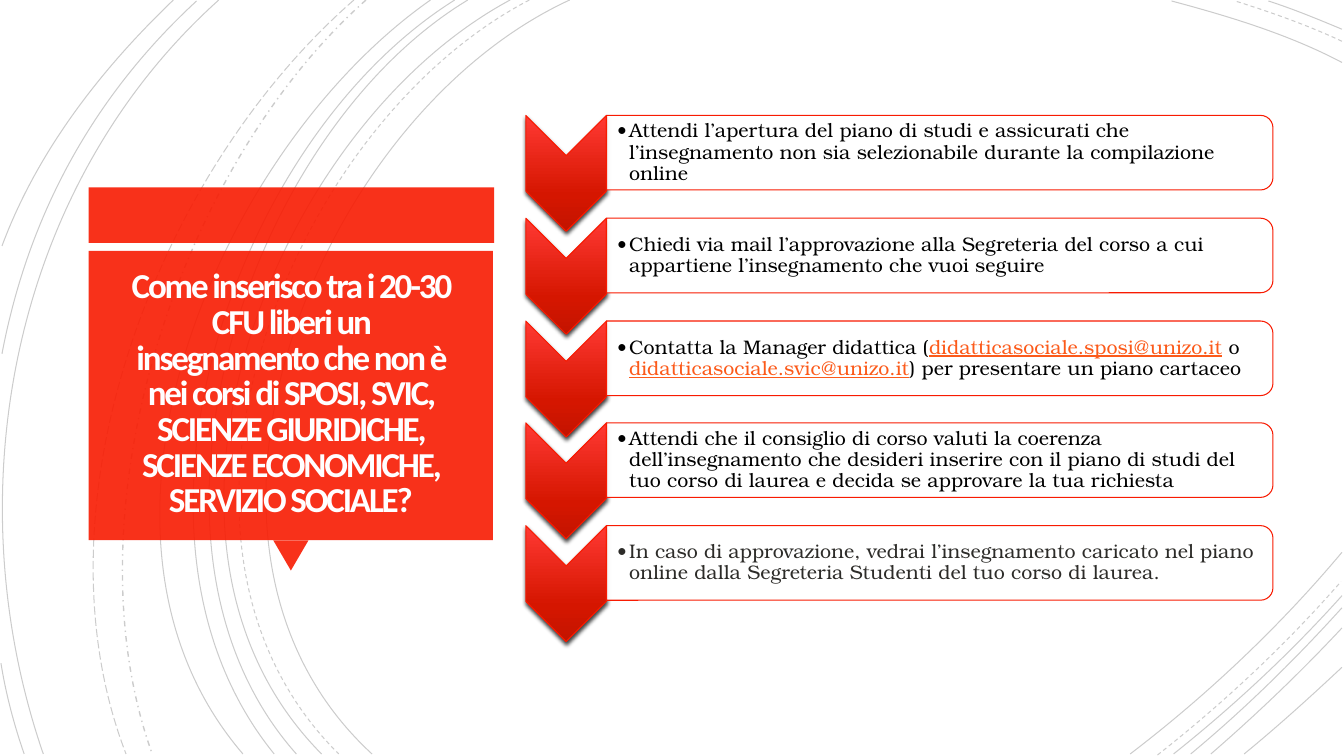
from lxml import etree
from pptx import Presentation
from pptx.dml.color import RGBColor
from pptx.enum import dml, shapes, text
from pptx.oxml import parse_xml
from pptx.oxml.ns import qn
from pptx import util as u

PX = 9144  # one hundredth of an inch
NS = 'xmlns:a="http://schemas.openxmlformats.org/drawingml/2006/main"'
THEME = {
    "red": "F81B02", "white": "FFFFFF", "title": "FFFEFF", "arc": "000000",
    "ink": "000000", "grey": "2D2C29", "link": "FC5A1A",
    "shine": [(0, "FF3933"), (69, "D51600"), (100, "C31400")],
    "head": "Calibri", "body": "TeX Gyre Bonum",
    "head_pt": 25, "body_pt": 14, "line_pt": 0.75,
}


def paint(shape, fill=None, alpha=100, edge=None, clear=100):
    """Set fill and outline colours with their opacity in percent."""
    shape.shadow.inherit = False
    if fill:
        shape.fill.solid()
        shape.fill.fore_color.rgb = RGBColor.from_string(fill)
    else:
        shape.fill.background()
    if edge:
        shape.line.color.rgb = RGBColor.from_string(edge)
        shape.line.width = u.Pt(THEME["line_pt"])
    else:
        shape.line.fill.background()
    for route, part in (("./p:spPr/a:solidFill", alpha), ("./p:spPr/a:ln/a:solidFill", clear)):
        for tint in shape.element.xpath(route + "/a:srgbClr"):
            if part < 100:
                etree.SubElement(tint, qn("a:alpha")).set("val", str(part * 1000))


def place(kind, x, y, w, h, turn=0):
    shape = slide.shapes.add_shape(kind, x * PX, y * PX, w * PX, h * PX)
    shape.rotation = turn
    return shape


deck = Presentation()
deck.slide_width, deck.slide_height = 1333 * PX, 750 * PX
slide = deck.slides.add_slide(deck.slide_layouts[5])
kinds = shapes.MSO_SHAPE

paint(place(kinds.RECTANGLE, 0, 0, 1333, 750), THEME["white"])

# Background arcs: dash, then start, two control points and end of each curve
solid, dash = dml.MSO_LINE.SOLID, dml.MSO_LINE.DASH
arcs = [
    (solid, (565, 0), (315, 115), (143, 540), (369, 748)),
    (solid, (1331, 62), (1278, 34), (1218, 16), (1162, 1)),
    (solid, (1121, 748), (1197, 690), (1269, 622), (1331, 548)),
    (dash, (525, 0), (285, 125), (123, 537), (336, 748)),
    (dash, (1331, 41), (1297, 25), (1260, 12), (1225, 1)),
    (dash, (1148, 749), (1213, 698), (1275, 640), (1330, 577)),
    (solid, (506, 0), (270, 127), (110, 537), (319, 748)),
    (solid, (1331, 29), (1307, 19), (1283, 9), (1258, 1)),
    (solid, (1164, 748), (1223, 701), (1280, 648), (1331, 591)),
    (solid, (464, 0), (244, 133), (110, 541), (294, 748)),
    (solid, (1181, 748), (1234, 704), (1284, 655), (1331, 603)),
    (solid, (451, 0), (231, 138), (97, 533), (272, 748)),
    (solid, (1201, 748), (1246, 709), (1290, 667), (1331, 623)),
    (solid, (427, 0), (217, 147), (53, 529), (241, 748)),
    (solid, (1234, 748), (1267, 721), (1299, 692), (1331, 662)),
    (dml.MSO_LINE.DASH_DOT, (363, 0), (176, 166), (65, 509), (151, 748)),
    (dml.MSO_LINE.LONG_DASH, (351, 0), (157, 169), (29, 499), (125, 748)),
    (solid, (217, 0), (11, 185), (-46, 490), (43, 748)),
    (solid, (195, 1), (92, 96), (28, 214), (2, 351)),
    (solid, (1, 658), (6, 689), (14, 719), (24, 748)),
    (solid, (172, 0), (100, 69), (37, 150), (2, 244)),
]
for style, start, *knots in arcs:
    pen = slide.shapes.build_freeform(*start, scale=PX)
    pen.add_line_segments(knots, close=False)
    arc = pen.convert_to_shape()
    # Join the three corner points into one Bézier segment
    track = arc.element.xpath(".//a:path")[0]
    curve = etree.SubElement(track, qn("a:cubicBezTo"))
    for leg in track.findall(qn("a:lnTo")):
        curve.append(leg[0])
        track.remove(leg)
    paint(arc, edge=THEME["arc"], clear=20)
    arc.line.dash_style = style
    if style == dml.MSO_LINE.DASH_DOT:
        arc.line.width = u.Pt(1)

# Title panel
for kind, box, turn in (
    (kinds.RECTANGLE, (88, 186, 402, 55), 0),
    (kinds.ISOSCELES_TRIANGLE, (271, 536, 35, 30), 180),
    (kinds.RECTANGLE, (88, 249, 401, 287), 0),
):
    paint(place(kind, *box, turn), THEME["red"], 90)

title = slide.shapes.title
slide.shapes.element.append(title.element)
title.left, title.top, title.width, title.height = (v * PX for v in (97, 258, 383, 268))
frame = title.text_frame
frame.text = ("Come inserisco tra i 20-30 CFU liberi un insegnamento che non è nei corsi di SPOSI, SVIC, "
              "SCIENZE GIURIDICHE, SCIENZE ECONOMICHE, SERVIZIO SOCIALE?")
frame.word_wrap = True
frame.auto_size = text.MSO_AUTO_SIZE.NONE
frame.vertical_anchor = text.MSO_ANCHOR.MIDDLE
frame.margin_left = frame.margin_right = frame.margin_top = frame.margin_bottom = 25 * PX
para = frame.paragraphs[0]
para.alignment = text.PP_ALIGN.CENTER
para.line_spacing = 0.85
run = para.runs[0]
run.font.name, run.font.size, run.font.bold = THEME["head"], u.Pt(THEME["head_pt"]), True
run.font.color.rgb = RGBColor.from_string(THEME["title"])
run.font._element.set("spc", "-150")

# Steps: each is a list of text pieces, with addresses at the odd places
steps = [
    ["Attendi l’apertura del piano di studi e assicurati che l’insegnamento non sia selezionabile "
     "durante la compilazione online"],
    ["Chiedi via mail l’approvazione alla Segreteria del corso a cui appartiene l’insegnamento "
     "che vuoi seguire"],
    ["Contatta la Manager didattica (", "didatticasociale.sposi@unizo.it", " o ",
     "didatticasociale.svic@unizo.it", ") per presentare un piano cartaceo"],
    ["Attendi che il consiglio di corso valuti la coerenza dell’insegnamento che desideri inserire "
     "con il piano di studi del tuo corso di laurea e decida se approvare la tua richiesta"],
    ["In caso di approvazione, vedrai l’insegnamento caricato nel piano online dalla Segreteria "
     "Studenti del tuo corso di laurea."],
]
stops = "".join(f'<a:gs pos="{at * 1000}"><a:srgbClr val="{tint}"/></a:gs>' for at, tint in THEME["shine"])
for i, pieces in enumerate(steps):
    drop = round(i * 407 / 4)
    arrow = place(kinds.CHEVRON, 504, 132 + drop, 115, 80, 90)
    paint(arrow, THEME["red"], edge=THEME["red"])
    props = arrow.element.spPr
    props.replace(props.find(qn("a:solidFill")), parse_xml(
        f'<a:gradFill {NS} rotWithShape="0"><a:gsLst>{stops}</a:gsLst>'
        '<a:lin ang="5400000" scaled="0"/></a:gradFill>'))
    props.find(qn("a:effectLst")).append(parse_xml(
        f'<a:outerShdw {NS} blurRad="38100" dist="25400" dir="5400000" rotWithShape="0">'
        '<a:srgbClr val="000000"><a:alpha val="75000"/></a:srgbClr></a:outerShdw>'))

    card = place(kinds.ROUND_2_SAME_RECTANGLE, 895, drop - 179, 74, 661, 90)
    paint(card, THEME["white"], 90, THEME["red"])

    note = slide.shapes.add_textbox(601 * PX, (118 + drop) * PX, 658 * PX, 67 * PX)
    frame = note.text_frame
    frame.word_wrap = True
    frame.vertical_anchor = text.MSO_ANCHOR.MIDDLE
    frame.margin_left = 11 * PX
    frame.margin_right = frame.margin_top = frame.margin_bottom = PX
    para = frame.paragraphs[0]
    para.level = 1
    para.line_spacing = 0.9
    marks = para._p.get_or_add_pPr()
    marks.set("marL", str(12 * PX))
    marks.set("indent", str(-12 * PX))
    etree.SubElement(marks, qn("a:buFont")).set("typeface", THEME["head"])
    etree.SubElement(marks, qn("a:buChar")).set("char", "•")
    ink = THEME["grey"] if i == len(steps) - 1 else THEME["ink"]
    for n, piece in enumerate(pieces):
        run = para.add_run()
        run.text = piece
        run.font.name, run.font.size = THEME["body"], u.Pt(THEME["body_pt"])
        run.font.underline = n % 2 == 1
        run.font.color.rgb = RGBColor.from_string(THEME["link"] if n % 2 else ink)

deck.save("out.pptx")
